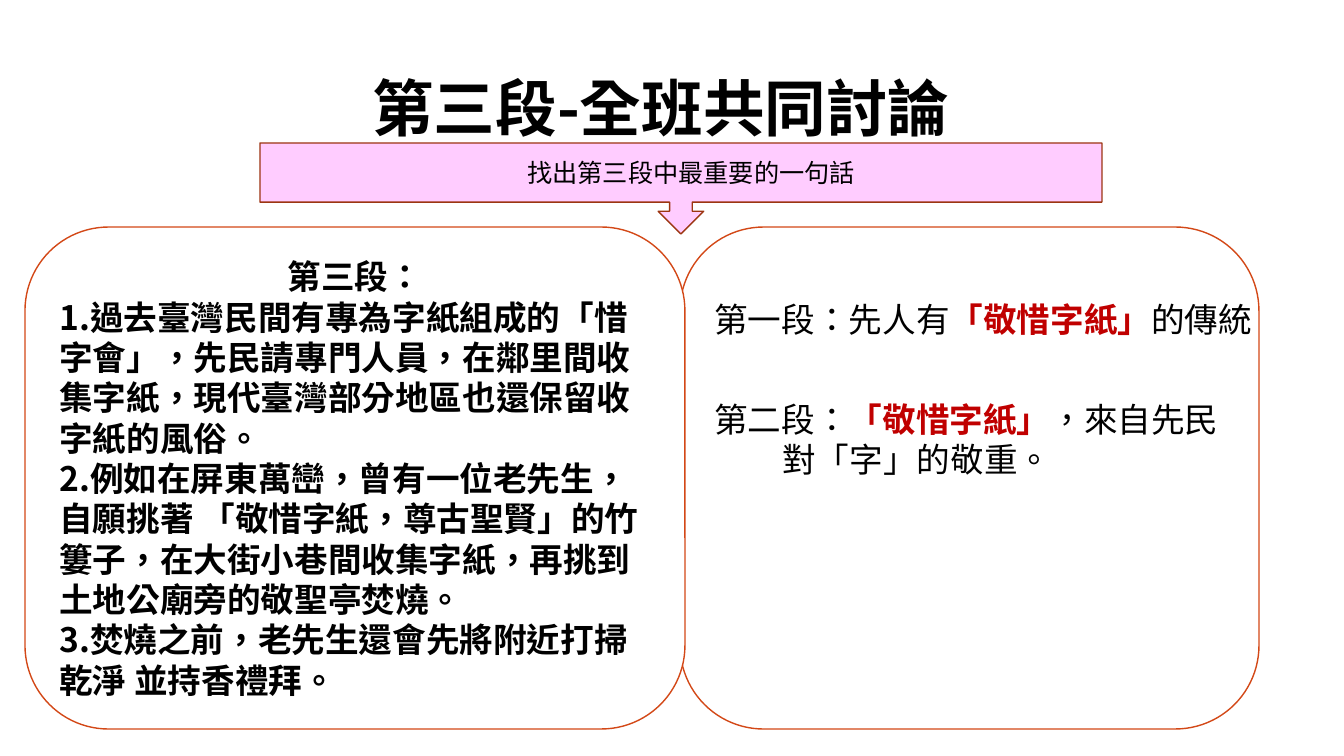
"""Class discussion slide: the key sentence of the third paragraph."""
from pptx import Presentation
from pptx import util as u
from pptx.dml.color import RGBColor
from pptx.enum import shapes, text
from pptx.oxml.ns import qn

PX = 9071
FONT = "Noto Sans CJK SC"
BLACK, RED, ORANGE = "000000", "C00000", "D34817"


def color(value):
    return RGBColor.from_string(value)


def add_run(paragraph, words, size, bold=False, ink=BLACK):
    run = paragraph.add_run()
    run.text = words
    run.font.name = FONT
    run.font.size = u.Pt(size)
    run.font.bold = bold
    run.font.color.rgb = color(ink)
    properties = run.font._element
    properties.set("lang", "zh-TW")
    east_asian = properties.makeelement(qn("a:ea"), {"typeface": FONT})
    properties.find(qn("a:latin")).addnext(east_asian)
    paragraph.line_spacing = u.Pt(size * 1.2)


deck = Presentation()
deck.slide_width, deck.slide_height = 1344 * PX, 756 * PX
slide = deck.slides.add_slide(deck.slide_layouts[6])

frames = []
for kind, box, fill, line in (
    (shapes.MSO_SHAPE.DOWN_ARROW_CALLOUT, (260, 143, 842, 91), "FFCCFF", "9C3511"),
    (shapes.MSO_SHAPE.ROUNDED_RECTANGLE, (680, 227, 579, 502), "FFFFFF", ORANGE),
    (shapes.MSO_SHAPE.ROUNDED_RECTANGLE, (25, 227, 660, 502), "FFFFFF", ORANGE),
):
    panel = slide.shapes.add_shape(kind, *(n * PX for n in box))
    panel.shadow.inherit = False
    panel.fill.solid()
    panel.fill.fore_color.rgb = color(fill)
    panel.line.color.rgb = color(line)
    panel.line.width = u.Pt(1)
    panel.text_frame.word_wrap = True
    panel.text_frame.vertical_anchor = text.MSO_ANCHOR.MIDDLE
    frames.append(panel.text_frame)
task, summaries, passage = frames

task.margin_left = 30 * PX
task.paragraphs[0].alignment = text.PP_ALIGN.CENTER
add_run(task.paragraphs[0], "找出第三段中最重要的一句話", 18)

title = slide.shapes.add_textbox(210 * PX, 58 * PX, 902 * PX, 122 * PX).text_frame
title.word_wrap = True
title.margin_top = 12 * PX
title.paragraphs[0].alignment = text.PP_ALIGN.CENTER
add_run(title.paragraphs[0], "第三段-全班共同討論", 44, bold=True)

summaries.word_wrap = False
summaries.vertical_anchor = text.MSO_ANCHOR.TOP
summaries.margin_top = 47 * PX
for index, (label, before, after) in enumerate((
    ("第一段：", "先人有", "的傳統"),
    ("第二段：", "", "，來自先民"),
)):
    summary = summaries.add_paragraph() if index else summaries.paragraphs[0]
    summary.alignment = text.PP_ALIGN.LEFT
    summary.space_before = u.Pt(43 * index)
    add_run(summary, label + before, 24)
    add_run(summary, "「敬惜字紙」", 24, bold=True, ink=RED)
    add_run(summary, after, 24)
continuation = summaries.add_paragraph()
continuation.alignment = text.PP_ALIGN.LEFT
continuation._p.get_or_add_pPr().set("marL", str(68 * PX))
add_run(continuation, "對「字」的敬重。", 24)

passage.paragraphs[0].alignment = text.PP_ALIGN.CENTER
add_run(passage.paragraphs[0], "第三段：", 24, bold=True)
for sentence in (
    "過去臺灣民間有專為字紙組成的「惜字會」，先民請專門人員，在鄰里間收集字紙，現代臺灣部分地區也還保留收字紙的風俗。",
    "例如在屏東萬巒，曾有一位老先生，自願挑著 「敬惜字紙，尊古聖賢」的竹簍子，在大街小巷間收集字紙，再挑到土地公廟旁的敬聖亭焚燒。",
    "焚燒之前，老先生還會先將附近打掃乾淨 並持香禮拜。",
):
    item = passage.add_paragraph()
    item.alignment = text.PP_ALIGN.LEFT
    item_properties = item._p.get_or_add_pPr()
    item_properties.append(
        item_properties.makeelement(qn("a:buAutoNum"), {"type": "arabicPeriod"}))
    add_run(item, sentence, 24, bold=True)

deck.save("out.pptx")
